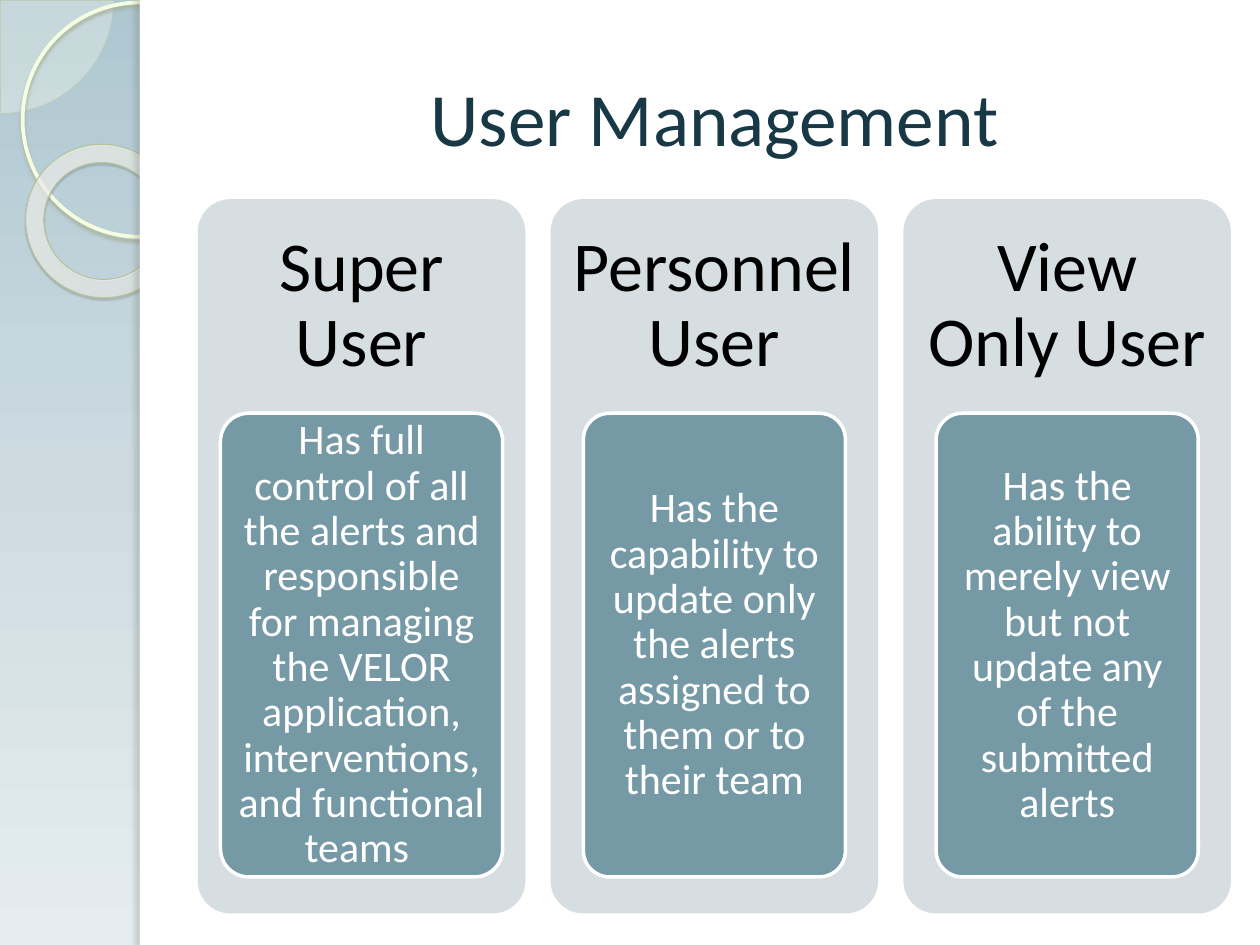
import dataclasses
import typing

import pptx
import pptx.dml.color
import pptx.enum.shapes
import pptx.enum.text
import pptx.oxml.ns
import pptx.util
from lxml import etree

KIND = pptx.enum.shapes.MSO_SHAPE
qn = pptx.oxml.ns.qn
HUES = {
    "title": "183846", "black": "000000", "white": "FFFFFF",
    "panel": "D6DEE1", "card": "759AA5",
    "pie": "FAFDF5", "pie edge": "C2CEA9", "ring": "F5FEE1",
    "ring shade": "A6AE96", "donut edge": "B6C39C",
    "donut shade": "535948", "strip shade": "6F7367",
}
SKY = [(0, "AEC7D0", 100), (50, "CDDBE1", 100), (100, "E6EDF0", 100)]
GLOW = [(0, "FCFEF7", 70), (70, "FEFFFB", 55), (100, "CEE59D", 60)]


class Box(typing.NamedTuple):
    """Place in percent of the slide's width and height."""
    left: float
    top: float
    width: float
    height: float


class Shade(typing.NamedTuple):
    hue: str
    alpha: int
    blur: float
    dist: float
    angle: int


@dataclasses.dataclass
class Form:
    kind: typing.Any
    box: Box
    fill: str | None = None
    alpha: int = 100
    stops: list | None = None
    edge: str | None = None
    width: float = 0
    adjust: tuple = ()
    turn: float = 0
    shade: Shade | None = None


class Role(typing.NamedTuple):
    head: str
    body: str
    width: float


deck = pptx.Presentation()
deck.slide_width = pptx.util.Inches(10)
deck.slide_height = pptx.util.Inches(7.5)
slide = deck.slides.add_slide(deck.slide_layouts[6])


def place(box: Box) -> list[int]:
    sides = (deck.slide_width, deck.slide_height) * 2
    return [round(part * side / 100) for part, side in zip(box, sides)]


def shade_of(name: str) -> pptx.dml.color.RGBColor:
    return pptx.dml.color.RGBColor.from_string(HUES[name])


def add_node(root, tag: str, **values):
    return etree.SubElement(root, qn(tag), {k: str(v) for k, v in values.items()})


def add_hue(root, code: str, alpha: int) -> None:
    node = add_node(root, "a:srgbClr", val=code)
    add_node(node, "a:alpha", val=alpha * 1000)


def set_stops(grad, stops: list) -> None:
    group = grad.find(qn("a:gsLst"))
    for old in list(group):
        group.remove(old)
    for spot, code, alpha in stops:
        add_hue(add_node(group, "a:gs", pos=spot * 1000), code, alpha)


def draw(form: Form):
    shape = slide.shapes.add_shape(form.kind, *place(form.box))
    shape.shadow.inherit = False
    shape.rotation = form.turn
    for index, value in enumerate(form.adjust):
        shape.adjustments[index] = value
    props = shape._element.spPr
    if form.stops:
        shape.fill.gradient()
        grad = props.find(qn("a:gradFill"))
        set_stops(grad, form.stops)
        grad.remove(grad.find(qn("a:lin")))
        radial = add_node(grad, "a:path", path="circle")
        add_node(radial, "a:fillToRect", l=-408000, t=-50000, r=508000, b=150000)
    elif form.fill:
        shape.fill.solid()
        shape.fill.fore_color.rgb = shade_of(form.fill)
        node = props.find(qn("a:solidFill")).find(qn("a:srgbClr"))
        add_node(node, "a:alpha", val=form.alpha * 1000)
    else:
        shape.fill.background()
    if form.edge:
        shape.line.color.rgb = shade_of(form.edge)
        shape.line.width = pptx.util.Pt(form.width)
    else:
        shape.line.fill.background()
    if form.shade:
        cast = form.shade
        node = add_node(props.find(qn("a:effectLst")), "a:outerShdw",
                        blurRad=pptx.util.Pt(cast.blur), dist=pptx.util.Pt(cast.dist),
                        dir=cast.angle * 60000, algn="ctr", rotWithShape=0)
        add_hue(node, HUES[cast.hue], cast.alpha)
    return shape


def write(shape, text: str, size: float, hue: str,
          pad: tuple[float, float] = (0.1, 0.05), space: float = 1) -> None:
    frame = shape.text_frame
    across, down = map(pptx.util.Inches, pad)
    line = frame.paragraphs[0]
    run = line.add_run()
    run.text = text
    looks = {
        frame: {"word_wrap": True, "margin_left": across, "margin_right": across,
                "margin_top": down, "margin_bottom": down,
                "vertical_anchor": pptx.enum.text.MSO_ANCHOR.MIDDLE},
        line: {"alignment": pptx.enum.text.PP_ALIGN.CENTER, "line_spacing": space},
        run.font: {"name": "Calibri", "size": pptx.util.Pt(size)},
    }
    for part, values in looks.items():
        for name, value in values.items():
            setattr(part, name, value)
    run.font.color.rgb = shade_of(hue)


# Sky behind the side strip
back = slide.background.fill
back.gradient()
back.gradient_angle = 270
set_stops(next(slide._element.iter(qn("a:gradFill"))), SKY)

# Circles, then the white page with its soft left edge
for form in (
    Form(KIND.PIE, Box(-8.9, -11.87, 17.9, 23.87), "pie", 33,
         edge="pie edge", width=0.25, adjust=(0, 54)),
    Form(KIND.OVAL, Box(1.8, 0.27, 18.6, 24.8), edge="ring", width=2.15,
         shade=Shade("ring shade", 85, 2, 2, 90)),
    Form(KIND.DONUT, Box(2, 15.33, 12.3, 16.13), stops=GLOW, edge="donut edge",
         width=0.58, adjust=(0.12,), turn=38.6,
         shade=Shade("donut shade", 35, 1, 1.2, 75)),
    Form(KIND.RECTANGLE, Box(11.1, 0, 88.9, 100), "white"),
    Form(KIND.RECTANGLE, Box(11.1, 0, 0.8, 100), "white",
         shade=Shade("strip shade", 25, 3, 3, 180)),
):
    draw(form)

# Title
LEFT, WIDE, STEP, TOP = 15.7, 26, 28, 21.07
title = slide.shapes.add_textbox(*place(Box(LEFT, 4, 82, 16.67)))
write(title, "User Management", 43, "title")

# One column for each kind of user
ROLES = [
    Role("Super User", "Has full control of all the alerts and responsible for managing "
         "the VELOR application, interventions, and functional teams ", 22.4),
    Role("Personnel User", "Has the capability to update only the alerts assigned "
         "to them or to their team", 20.8),
    Role("View Only User", "Has the ability to merely view but not update any "
         "of the submitted alerts", 20.8),
]
for index, role in enumerate(ROLES):
    left = LEFT + index * STEP
    draw(Form(KIND.ROUNDED_RECTANGLE, Box(left, TOP, WIDE, 75.6), "panel", adjust=(0.1,)))
    head = slide.shapes.add_textbox(*place(Box(left, TOP, WIDE, 22.67)))
    write(head, role.head, 40, "black", (0.17, 0.17), 0.9)
    inset = (WIDE - role.width) / 2
    card = draw(Form(KIND.ROUNDED_RECTANGLE, Box(left + inset, 43.73, role.width, 49.07),
                     "card", edge="white", width=2, adjust=(0.1,)))
    write(card, role.body, 24, "white", (0.07, 0.05), 0.9)

deck.save("out.pptx")
